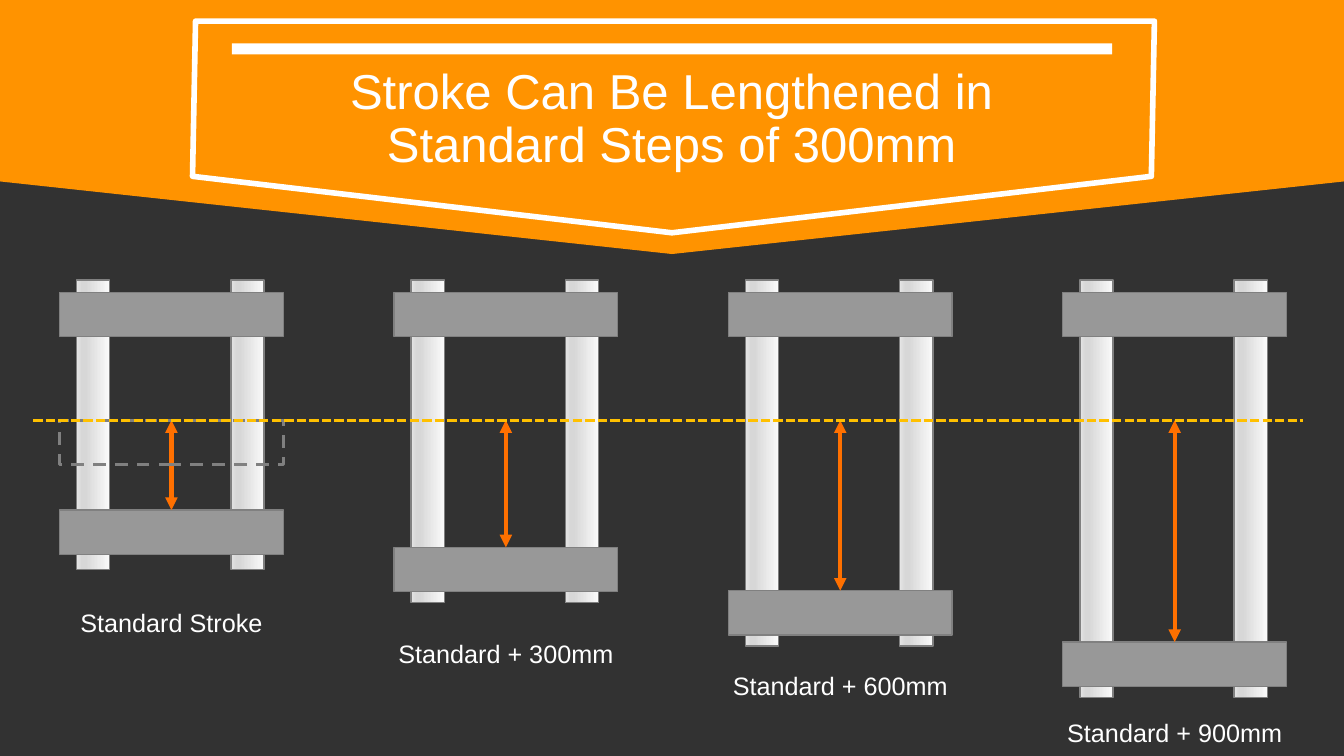
from lxml import etree
from pptx import Presentation
from pptx.dml.color import RGBColor
from pptx.enum import dml, shapes, text
from pptx.oxml.ns import qn
from pptx.util import Inches, Pt

CHARCOAL = RGBColor(0x32, 0x32, 0x32)
ORANGE = RGBColor(0xFF, 0x93, 0x00)
STROKE_ORANGE = RGBColor(0xFF, 0x70, 0x00)
AMBER = RGBColor(0xFF, 0xC0, 0x00)
WHITE = RGBColor(0xFF, 0xFF, 0xFF)
PLATE_GREY = RGBColor(0x98, 0x98, 0x98)
EDGE_GREY = RGBColor(0x80, 0x80, 0x80)
ROD_SHADES = [(0, RGBColor(0xFA, 0xFA, 0xFA)), (74, RGBColor(0xD7, 0xD7, 0xD7)),
              (83, RGBColor(0xD7, 0xD7, 0xD7)), (100, RGBColor(0xE4, 0xE4, 0xE4))]
FONT = "Arial"

SLIDE_W, SLIDE_H = 13.33, 7.5
FIRST_LEFT, PITCH, PRESS_TOP = 0.59, 3.317, 2.78
PLATE_W, PLATE_H, PLATE_DROP = 2.22, 0.44, 0.12
ROD_W, ROD_OFFSETS = 0.33, (0.17, 1.7)
STROKE_TOP = 4.17

# Label, top of the lower plate, bottom of the rods, top of the label
PRESSES = [
    ("Standard Stroke", 5.06, 5.65, 5.98),
    ("Standard + 300mm", 5.43, 5.98, 6.28),
    ("Standard + 600mm", 5.86, 6.41, 6.6),
    ("Standard + 900mm", 6.37, 6.92, 7.07),
]


def add_box(slide, left, top, width, height, fill=None, edge=None, weight=1):
    box = slide.shapes.add_shape(shapes.MSO_SHAPE.RECTANGLE, Inches(left), Inches(top),
                                 Inches(width), Inches(height))
    box.shadow.inherit = False
    if fill is None:
        box.fill.background()
    else:
        box.fill.solid()
        box.fill.fore_color.rgb = fill
    if edge is None:
        box.line.fill.background()
    else:
        box.line.color.rgb = edge
        box.line.width = Pt(weight)
    return box


def add_outline(slide, points):
    (start_x, start_y), *rest = [(Inches(x), Inches(y)) for x, y in points]
    builder = slide.shapes.build_freeform(start_x, start_y)
    builder.add_line_segments(rest, close=True)
    outline = builder.convert_to_shape()
    outline.shadow.inherit = False
    return outline


def add_line(slide, start, end, color, weight):
    line = slide.shapes.add_connector(shapes.MSO_CONNECTOR.STRAIGHT,
                                      *[Inches(v) for v in (*start, *end)])
    line.line.color.rgb = color
    line.line.width = Pt(weight)
    etree.SubElement(line._element.spPr, qn("a:effectLst"))
    return line


def add_rod(slide, left, top, height):
    rod = add_box(slide, left, top, ROD_W, height, edge=EDGE_GREY)
    rod.fill.gradient()
    rod.fill.gradient_angle = 180
    stops = rod._element.spPr.find(qn("a:gradFill")).find(qn("a:gsLst"))
    for stop in list(stops):
        stops.remove(stop)
    for percent, shade in ROD_SHADES:
        stop = etree.SubElement(stops, qn("a:gs"), pos=str(percent * 1000))
        etree.SubElement(stop, qn("a:srgbClr"), val=str(shade))


def add_banner(slide, width):
    middle = width / 2
    # Orange backdrop
    backdrop = add_outline(slide, [(0, 0), (width, 0), (width, 1.8), (middle, 2.52), (0, 1.8)])
    backdrop.fill.solid()
    backdrop.fill.fore_color.rgb = ORANGE
    backdrop.line.fill.background()

    # White frame
    frame = add_outline(slide, [(1.94, 0.21), (11.45, 0.21), (11.42, 1.75),
                                (middle, 2.31), (1.91, 1.75)])
    frame.fill.background()
    frame.line.color.rgb = WHITE
    frame.line.width = Pt(4)
    etree.SubElement(frame.line._get_or_add_ln(), qn("a:round"))

    # Bar and title
    title_left, title_w = 2.3, 8.73
    add_box(slide, title_left, 0.43, title_w, 0.11, fill=WHITE)
    title = slide.shapes.title
    title.left, title.top = Inches(title_left), Inches(0.54)
    title.width, title.height = Inches(title_w), Inches(1.31)
    frame_text = title.text_frame
    frame_text.text = "Stroke Can Be Lengthened in\vStandard Steps of 300mm"
    frame_text.auto_size = text.MSO_AUTO_SIZE.NONE
    frame_text.vertical_anchor = text.MSO_ANCHOR.MIDDLE
    heading = frame_text.paragraphs[0]
    heading.alignment = text.PP_ALIGN.CENTER
    heading.line_spacing = 0.9
    for run in heading.runs:
        run.font.name, run.font.size = FONT, Pt(35)
        run.font.color.rgb = WHITE
    slide.shapes._spTree.append(title._element)  # in front of the banner


def add_press(slide, left, top, label, lower_top, rod_bottom, label_top):
    # Rods and plates
    for offset in ROD_OFFSETS:
        add_rod(slide, left + offset, top, rod_bottom - top)
    add_box(slide, left, top + PLATE_DROP, PLATE_W, PLATE_H, PLATE_GREY, EDGE_GREY)
    lower_plate = add_box(slide, left, lower_top, PLATE_W, PLATE_H, PLATE_GREY, EDGE_GREY)

    # Stroke arrow
    center = left + PLATE_W / 2
    stroke = add_line(slide, (center, STROKE_TOP), (center, lower_top), STROKE_ORANGE, 3)
    stroke.end_connect(lower_plate, 0)
    for end in ("a:headEnd", "a:tailEnd"):
        etree.SubElement(stroke.line._get_or_add_ln(), qn(end), type="triangle")

    # Label
    label_w = 2.35
    caption = slide.shapes.add_textbox(Inches(center - label_w / 2), Inches(label_top),
                                       Inches(label_w), Inches(0.4))
    caption.text_frame.text = label
    caption.text_frame.word_wrap = False
    caption.text_frame.auto_size = text.MSO_AUTO_SIZE.SHAPE_TO_FIT_TEXT
    paragraph = caption.text_frame.paragraphs[0]
    paragraph.alignment = text.PP_ALIGN.CENTER
    paragraph.font.name, paragraph.font.size = FONT, Pt(18)
    paragraph.font.color.rgb = WHITE


def add_stroke_reference(slide, left, top):
    # Raised plate position and the level shared by all presses
    raised_plate = add_box(slide, left, top, PLATE_W, PLATE_H, edge=EDGE_GREY, weight=2.25)
    raised_plate.line.dash_style = dml.MSO_LINE.DASH
    level = add_line(slide, (0.33, top), (12.92, top), AMBER, 2.25)
    level.line.dash_style = dml.MSO_LINE.SQUARE_DOT


def main():
    deck = Presentation()
    deck.slide_width, deck.slide_height = Inches(SLIDE_W), Inches(SLIDE_H)
    slide = deck.slides.add_slide(deck.slide_layouts[5])
    slide.background.fill.solid()
    slide.background.fill.fore_color.rgb = CHARCOAL

    add_banner(slide, SLIDE_W)
    for index, press in enumerate(PRESSES):
        add_press(slide, FIRST_LEFT + index * PITCH, PRESS_TOP, *press)
    add_stroke_reference(slide, FIRST_LEFT, STROKE_TOP)
    deck.save("out.pptx")


if __name__ == "__main__":
    main()
